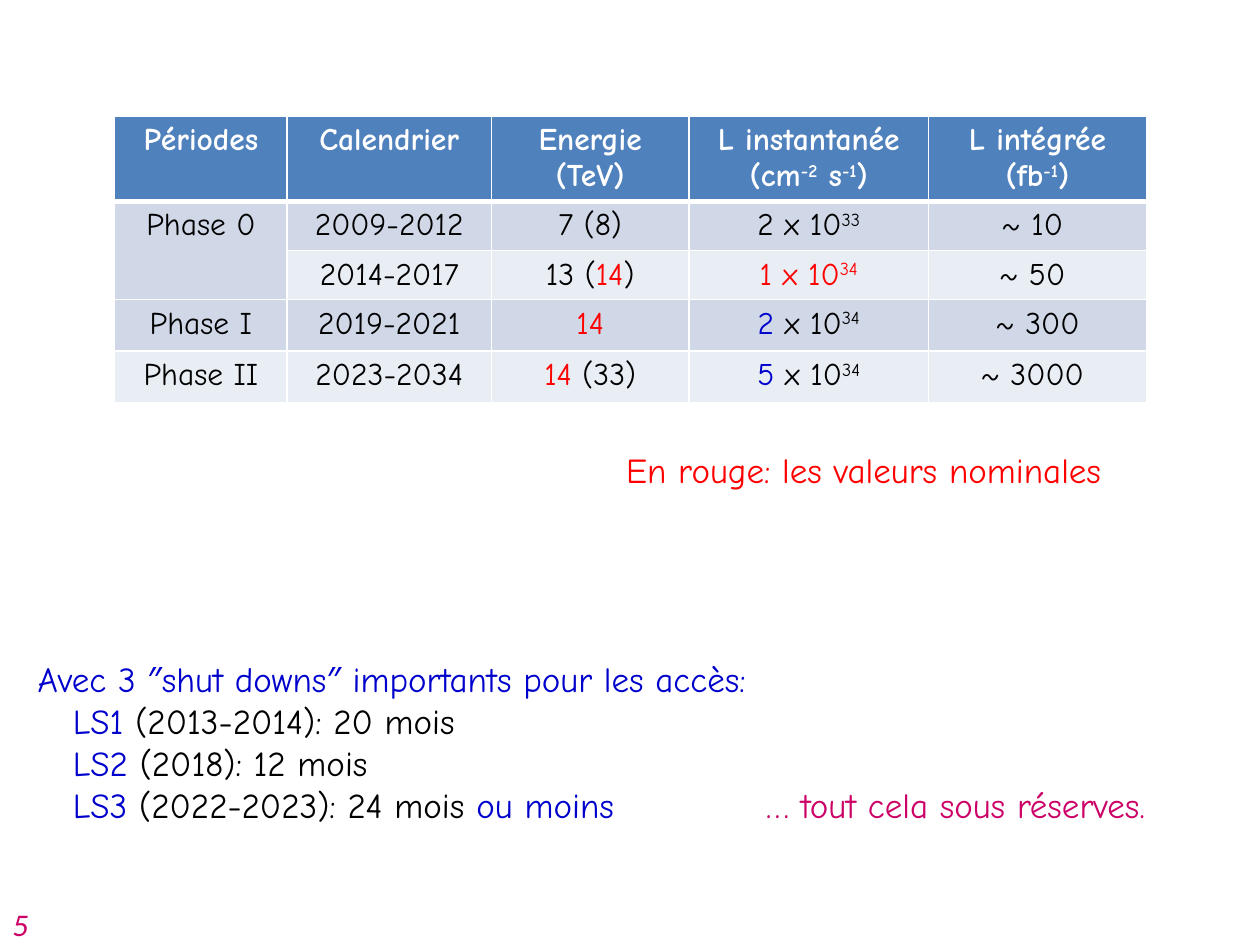
import pptx
import pptx.dml.color
import pptx.enum.text
import pptx.oxml
import pptx.oxml.ns
import pptx.util
from pptx.util import Inches

BLACK, WHITE, RED, BLUE, PINK = "000000", "FFFFFF", "FF0000", "0000CC", "CC0066"
HEADER, BAND_DARK, BAND_LIGHT = "4F81BD", "D0D8E8", "E9EDF4"
FONT = "Comic Neue"

COLUMNS = [1.37, 1.62, 1.57, 1.9, 1.73]
ROWS = [0.67, 0.39, 0.39, 0.41, 0.41]

# A cell is a list of paragraphs, a paragraph a list of runs.
# A run is a text or (text, colour); a leading ^ makes it superscript.
HEADINGS = [
    [["Périodes"]],
    [["Calendrier"]],
    [["Energie"], ["(TeV)"]],
    [["L instantanée"], ["(cm", "^-2", " s", "^-1", ")"]],
    [["L intégrée"], ["(fb", "^-1", ")"]],
]
PERIODS = [
    [[["Phase 0"]], [["2009-2012"]], [["7 (8)"]],
     [["2 x 10", "^33"]], [["~ 10 "]]],
    [None, [["2014-2017"]], [["13 (", ("14", RED), ")"]],
     [[("1 x 10", RED), ("^34", RED)]], [["~ 50 "]]],
    [[["Phase I"]], [["2019-2021"]], [[("14", RED)]],
     [[("2 ", BLUE), "x 10", "^34"]], [["~ 300"]]],
    [[["Phase II"]], [["2023-2034"]], [[("14", RED), " (33)"]],
     [[("5", BLUE), " x 10", "^34"]], [["~ 3000 "]]],
]
SHUTDOWNS = [
    [("Avec 3 ″shut downs″ importants pour les accès:", BLUE)],
    [("\tLS1 ", BLUE), "(2013-2014): 20 mois"],
    [("\tLS2 ", BLUE), "(2018): 12 mois"],
    [("\tLS3 ", BLUE), "(2022-2023): 24 mois ", ("ou moins", BLUE),
     ("\t… tout cela sous réserves.", PINK)],
]


def rgb(value):
    return pptx.dml.color.RGBColor.from_string(value)


def write(tf, paragraphs, size, color=BLACK, font=FONT, bold=False,
          italic=False, align=pptx.enum.text.PP_ALIGN.LEFT):
    for i, runs in enumerate(paragraphs):
        p = tf.add_paragraph() if i else tf.paragraphs[0]
        p.alignment = align
        for run in runs:
            text, run_color = (run, color) if isinstance(run, str) else run
            r = p.add_run()
            r.text = text.lstrip("^")
            r.font.name, r.font.size = font, pptx.util.Pt(size)
            r.font.bold, r.font.italic = bold, italic
            r.font.color.rgb = rgb(run_color)
            if text.startswith("^"):
                r._r.get_or_add_rPr().set("baseline", "30000")


def set_borders(cell, **widths):
    tcPr = cell._tc.get_or_add_tcPr()
    for side in "LRTB":
        width = pptx.util.Pt(widths.get(side, 1))
        tcPr.append(pptx.oxml.parse_xml(
            f'<a:ln{side} {pptx.oxml.ns.nsdecls("a")} w="{width}"><a:solidFill>'
            f'<a:srgbClr val="{WHITE}"/></a:solidFill></a:ln{side}>'))


def set_tabs(p, *stops):
    tabs = "".join(f'<a:tab pos="{Inches(s)}" algn="l"/>' for s in stops)
    p._p.get_or_add_pPr().append(pptx.oxml.parse_xml(
        f'<a:tabLst {pptx.oxml.ns.nsdecls("a")}>{tabs}</a:tabLst>'))


def add_period_table(s, left, top):
    table = s.shapes.add_table(
        len(ROWS), len(COLUMNS), Inches(left), Inches(top),
        Inches(sum(COLUMNS)), Inches(sum(ROWS))).table
    for column, width in zip(table.columns, COLUMNS):
        column.width = Inches(width)
    for row, height in zip(table.rows, ROWS):
        row.height = Inches(height)
    for i, contents in enumerate([HEADINGS] + PERIODS):
        head = i == 0
        fill = HEADER if head else (BAND_DARK if i % 2 else BAND_LIGHT)
        for j, paragraphs in enumerate(contents):
            cell = table.cell(i, j)
            set_borders(cell, **({"B": 3} if head else {"T": 3} if i == 1 else {}))
            cell.fill.solid()
            cell.fill.fore_color.rgb = rgb(fill)
            if paragraphs:
                write(cell.text_frame, paragraphs, 18, WHITE if head else BLACK,
                      bold=head, align=pptx.enum.text.PP_ALIGN.CENTER)
    # Phase 0 covers two running periods
    table.cell(1, 0).merge(table.cell(2, 0))


def add_text(s, left, top, width, height, paragraphs, size=20, **style):
    box = s.shapes.add_textbox(*map(Inches, (left, top, width, height)))
    tf = box.text_frame
    tf.word_wrap = True
    write(tf, paragraphs, size, **style)
    return tf


def add_shutdowns(s, left, top, width, height):
    tf = add_text(s, left, top, width, height, SHUTDOWNS)
    for p in tf.paragraphs[1:]:
        set_tabs(p, 0.28, 5.78)


def main():
    prs = pptx.Presentation()
    prs.slide_width, prs.slide_height = Inches(10), Inches(7.5)
    s = prs.slides.add_slide(prs.slide_layouts[6])

    # Running periods and the legend for the red values
    add_period_table(s, 0.91, 0.92)
    add_text(s, 4.87, 3.51, 4.22, 0.44,
             [["En rouge: les valeurs nominales"]], color=RED)

    # Long shutdowns
    add_shutdowns(s, 0.2, 5.17, 9.77, 1.45)

    # Page number
    add_text(s, 0, 7.13, 0.33, 0.4, [["5"]], 18,
             color=PINK, font="Calibri", italic=True)
    prs.save("out.pptx")


if __name__ == "__main__":
    main()
